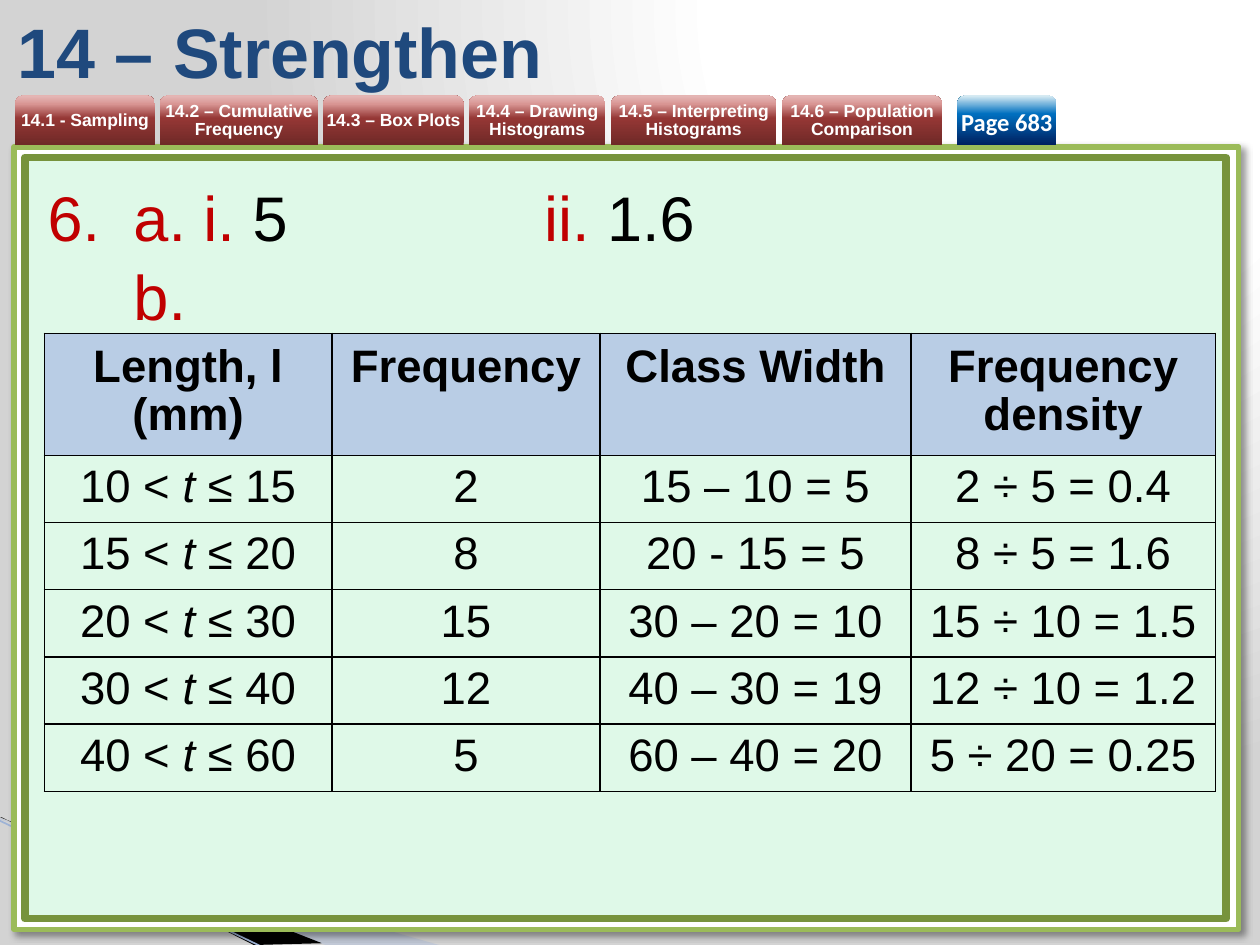
from lxml.etree import SubElement
from pptx import Presentation
from pptx.dml.color import RGBColor
from pptx.enum.shapes import MSO_CONNECTOR, MSO_SHAPE
from pptx.enum.text import MSO_ANCHOR, PP_ALIGN
from pptx.oxml.ns import qn
from pptx.util import Pt

TITLE = "14 – Strengthen"
RED_STOPS = [(0, "6F2927"), (54, "953735"), (83, "D99694"), (100, "E6B9B8")]
BLUE_STOPS = [(0, "002060"), (63, "0070C0"), (100, "DBEEF4")]
PAGE_STOPS = [(0, "FFFFFF"), (40, "FFFFFF"), (100, "D3D3D3")]
TAB_FONT = {"name": "Arial", "size": Pt(10), "bold": True}
PAGE_FONT = {"name": "Calibri", "size": Pt(14), "bold": True}
TABS = [
    ("14.1 - Sampling", 8.6, 79.9),
    ("14.2 – Cumulative Frequency", 91.4, 90.3),
    ("14.3 – Box Plots", 184.7, 80.2),
    ("14.4 – Drawing Histograms", 268, 78),
    ("14.5 – Interpreting Histograms", 349.2, 94.3),
    ("14.6 – Population Comparison", 446.9, 91.4),
]
PAGE_TAB = ("Page 683", 547, 56.7)
PANELS = [
    ((8, 84, 700, 447), "FFFFFF", "9BBB59", 3),
    ((14.2, 90, 686.4, 435), "DFF9E8", "77933C", 4.33),
]
SWOOSHES = [
    ([(-0.7, 468), (251.3, 540), (186.5, 540), (-0.7, 467.3)], "A7B9DB", 40),
    ([(0, 466.6), (184.3, 539.3), (145.4, 540), (0.7, 467.3)], "000000", 100),
]
ANSWER = [("a. i. ", "C00000"), ("5\t", "000000"), ("ii.", "C00000"),
          (" 1.6", "000000"), None, ("b.", "C00000")]
ANSWER_TABS = [89.3, 283.7, 468.7, 535.7]
HEADERS = ["Length, l (mm)", "Frequency", "Class Width", "Frequency density"]
ROWS = [
    (10, 15, "2", "15 – 10 = 5", "2 ÷ 5 = 0.4"),
    (15, 20, "8", "20 - 15 = 5", "8 ÷ 5 = 1.6"),
    (20, 30, "15", "30 – 20 = 10", "15 ÷ 10 = 1.5"),
    (30, 40, "12", "40 – 30 = 19", "12 ÷ 10 = 1.2"),
    (40, 60, "5", "60 – 40 = 20", "5 ÷ 20 = 0.25"),
]
COLUMNS = [164.4, 153.2, 177.8, 173.8]
HEADER_HEIGHT, ROW_HEIGHT = 69.7, 38.4


def color(value):
    return RGBColor.from_string(value)


def add(parent, tag, **values):
    return SubElement(parent, qn(tag), {key: str(value) for key, value in values.items()})


def add_color(parent, value, alpha=100):
    item = add(parent, "a:srgbClr", val=value)
    if alpha < 100:
        add(item, "a:alpha", val=alpha * 1000)


def lengths(*values):
    return [Pt(value) for value in values]


def add_span(para, text, font, value):
    span = para.add_run()
    span.text = text
    for name, setting in font.items():
        setattr(span.font, name, setting)
    span.font.color.rgb = color(value)


def set_gradient(fill, element, stops):
    fill.gradient()
    gradient = element.find(".//" + qn("a:gradFill"))
    for child in list(gradient):
        gradient.remove(child)
    stop_list = add(gradient, "a:gsLst")
    for position, value in stops:
        add_color(add(stop_list, "a:gs", pos=position * 1000), value)
    return gradient


def draw_background(page):
    gradient = set_gradient(page.background.fill, page.element, PAGE_STOPS)
    focus = add(gradient, "a:path", path="circle")
    add(focus, "a:fillToRect", l=65000, t=0, r=0, b=98000)
    for points, value, alpha in SWOOSHES:
        builder = page.shapes.build_freeform(*points[0], scale=12700)
        builder.add_line_segments(points[1:], close=True)
        swoosh = builder.convert_to_shape()
        swoosh.shadow.inherit = False
        swoosh.fill.solid()
        swoosh.fill.fore_color.rgb = color(value)
        swoosh.line.fill.background()
        if alpha < 100:
            tint = swoosh._element.spPr.find(qn("a:solidFill"))[0]
            add(tint, "a:alpha", val=alpha * 1000)
    edge = page.shapes.add_connector(MSO_CONNECTOR.STRAIGHT, *lengths(-0.7, 468.7, 150.5, 541.4))
    edge.line.color.rgb = color("9EB3D6")
    edge.line.width = Pt(0.95)
    add(edge._element.spPr, "a:effectLst")


def draw_panels(page):
    for index, (frame, fill, line, width) in enumerate(PANELS):
        panel = page.shapes.add_shape(MSO_SHAPE.RECTANGLE, *lengths(*frame))
        panel.shadow.inherit = False
        panel.fill.solid()
        panel.fill.fore_color.rgb = color(fill)
        panel.line.color.rgb = color(line)
        panel.line.width = Pt(width)
        if index == 0:
            effects = panel._element.spPr.find(qn("a:effectLst"))
            shadow = add(effects, "a:outerShdw", blurRad=Pt(4), dist=Pt(3),
                         dir=2700000, algn="tl", rotWithShape=0)
            add_color(shadow, "000000", 40)


def draw_tab(page, label, left, width, stops, font, spacing=None):
    tab = page.shapes.add_shape(MSO_SHAPE.ROUND_2_SAME_RECTANGLE,
                                *lengths(left, 54.6, width, 28.2))
    tab.shadow.inherit = False
    tab.line.fill.background()
    gradient = set_gradient(tab.fill, tab._element.spPr, stops)
    add(gradient, "a:lin", ang=16200000, scaled=0)
    frame = tab.text_frame
    frame.word_wrap = True
    frame.vertical_anchor = MSO_ANCHOR.MIDDLE
    for side in ("left", "top", "right", "bottom"):
        setattr(frame, "margin_" + side, 0)
    para = frame.paragraphs[0]
    para.alignment = PP_ALIGN.CENTER
    para.line_spacing = spacing
    add_span(para, label, font, "FFFFFF")


def draw_text(page):
    title = page.shapes.add_textbox(*lengths(3, 3.6, 607, 51)).text_frame
    title.word_wrap = True
    title.vertical_anchor = MSO_ANCHOR.MIDDLE
    add_span(title.paragraphs[0], TITLE, {"name": "Arial", "size": Pt(40), "bold": True}, "1F497D")

    answer = page.shapes.add_textbox(*lengths(20.2, 97, 674.6, 94)).text_frame
    answer.word_wrap = True
    para = answer.paragraphs[0]
    para.line_spacing = 1.04
    settings = para._p.get_or_add_pPr()
    settings.set("marL", str(Pt(49)))
    settings.set("indent", str(Pt(-49)))
    add_color(add(settings, "a:buClr"), "C00000")
    add(settings, "a:buFont", typeface="+mj-lt")
    add(settings, "a:buAutoNum", type="arabicPeriod", startAt=6)
    stops = add(settings, "a:tabLst")
    for position in ANSWER_TABS:
        add(stops, "a:tab", pos=Pt(position), algn="l")
    for part in ANSWER:
        if part is None:
            para.add_line_break()
        else:
            add_span(para, part[0], {"name": "Arial", "size": Pt(36)}, part[1])


def fill_cell(cell, parts, header):
    margins = {"left": 3.6, "top": 6 if header else 3.6, "right": 3.6, "bottom": 3.6}
    for side, margin in margins.items():
        setattr(cell, "margin_" + side, Pt(margin))
    settings = cell._tc.get_or_add_tcPr()
    for tag in ("a:lnL", "a:lnR", "a:lnT", "a:lnB"):
        add_color(add(add(settings, tag, w=Pt(1)), "a:solidFill"), "000000")
    if header:
        cell.fill.solid()
        cell.fill.fore_color.rgb = color("B9CDE5")
    else:
        cell.fill.background()
    para = cell.text_frame.paragraphs[0]
    para.alignment = PP_ALIGN.CENTER
    if header:
        para.line_spacing = 0.95
    for text in parts:
        font = {"name": "Arial", "size": Pt(26), "bold": header, "italic": text == "t"}
        add_span(para, text, font, "000000")


def draw_table(page):
    content = [[[label] for label in HEADERS]]
    for low, high, *values in ROWS:
        content.append([[f"{low} < ", "t", f" ≤ {high}"]] + [[value] for value in values])
    heights = [HEADER_HEIGHT] + [ROW_HEIGHT] * len(ROWS)
    table = page.shapes.add_table(len(content), len(COLUMNS), *lengths(
        25.3, 190.5, sum(COLUMNS), sum(heights))).table
    table.horz_banding = False
    for column, width in zip(table.columns, COLUMNS):
        column.width = Pt(width)
    for index, (row, height) in enumerate(zip(table.rows, heights)):
        row.height = Pt(height)
        for cell, parts in zip(row.cells, content[index]):
            fill_cell(cell, parts, index == 0)


def main():
    deck = Presentation()
    deck.slide_width, deck.slide_height = lengths(720, 540)
    page = deck.slides.add_slide(deck.slide_layouts[6])
    draw_background(page)
    draw_panels(page)
    for tab in TABS:
        draw_tab(page, *tab, RED_STOPS, TAB_FONT, Pt(10))
    draw_tab(page, *PAGE_TAB, BLUE_STOPS, PAGE_FONT)
    draw_text(page)
    draw_table(page)
    deck.save("out.pptx")


if __name__ == "__main__":
    main()
